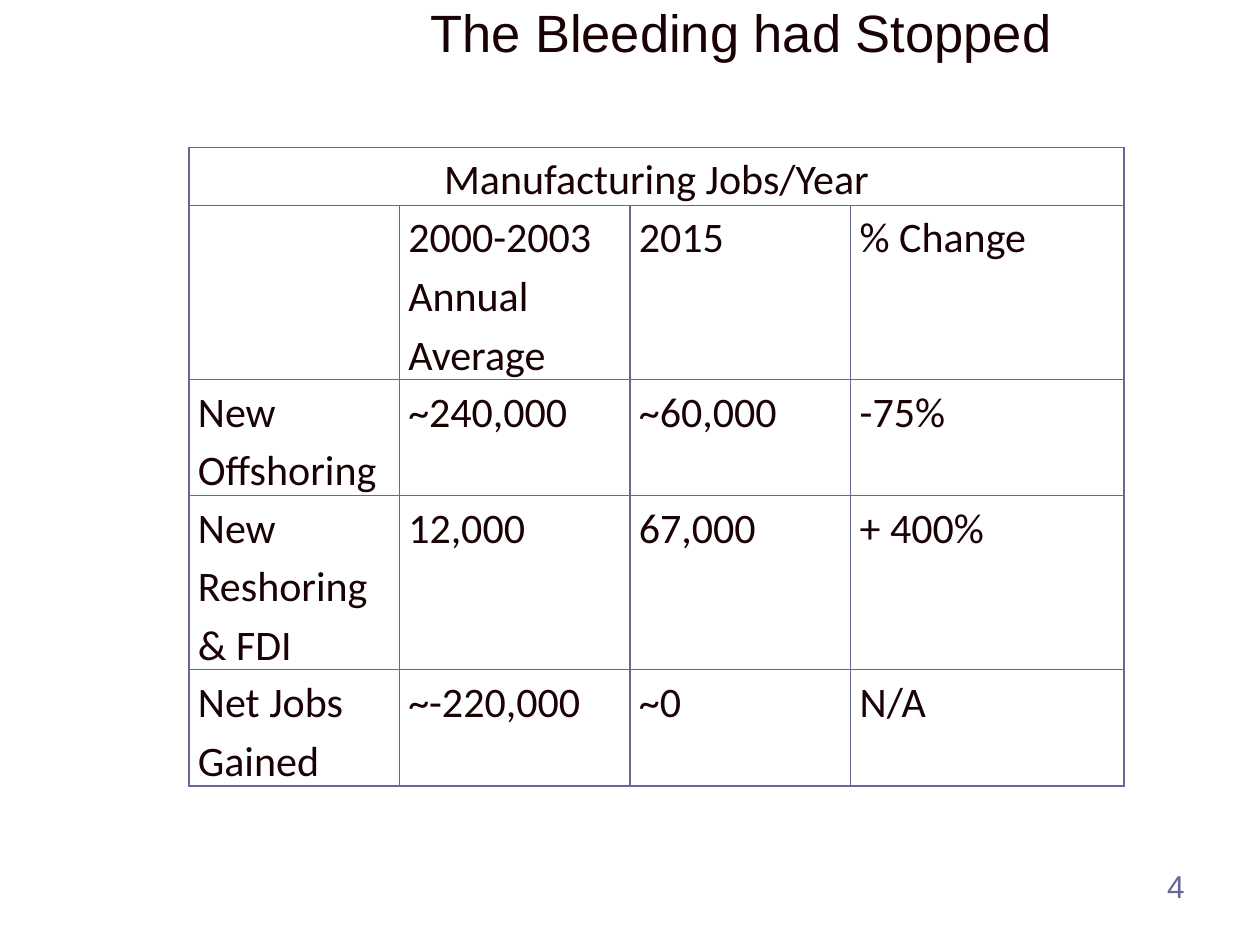
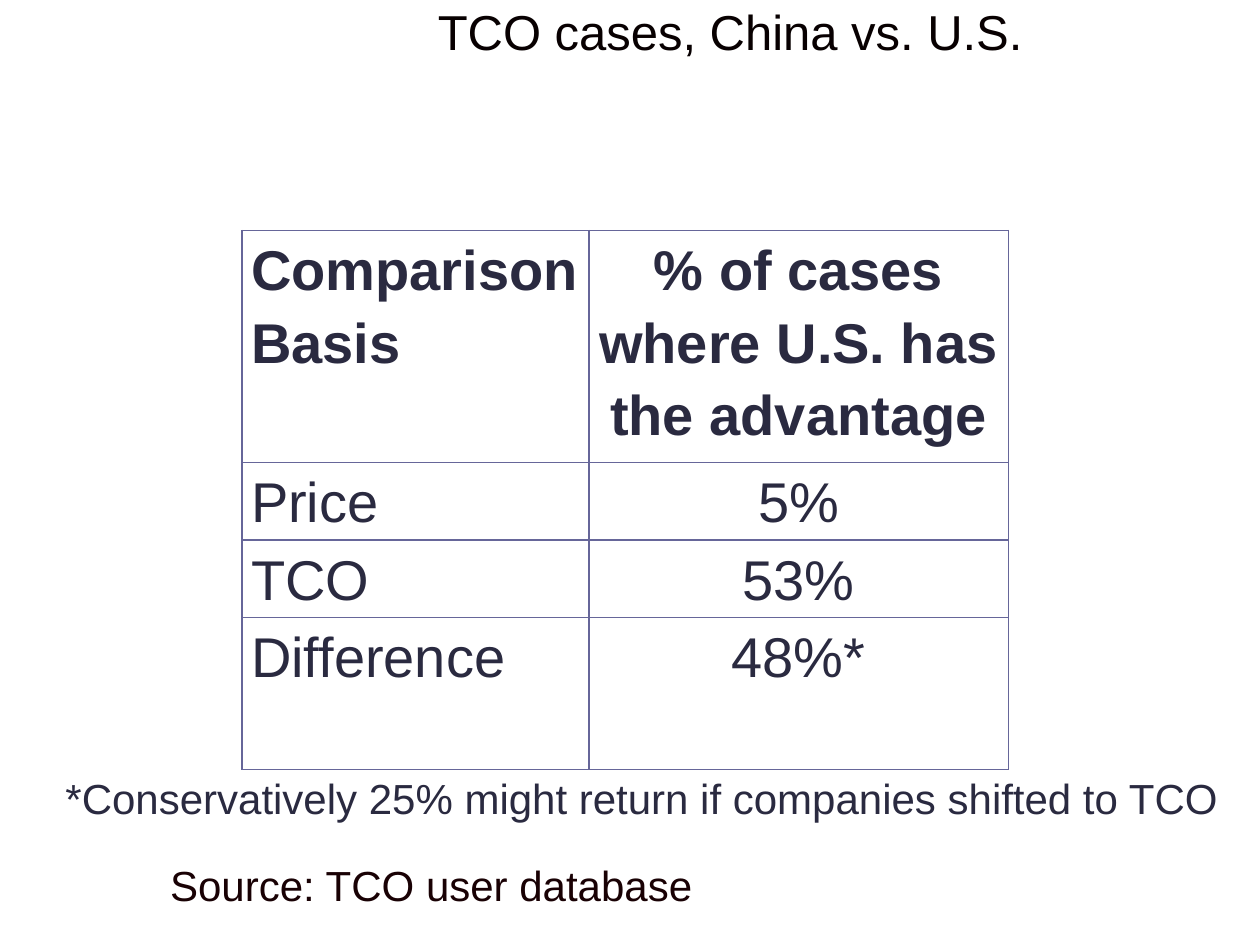
from lxml import etree
from pptx import Presentation
from pptx.dml.color import RGBColor
from pptx.enum import text
from pptx.oxml import ns
from pptx.util import Cm, Pt

INK = RGBColor(0x19, 0x01, 0x04)
BLACK = RGBColor(0x08, 0x00, 0x01)
NAVY = RGBColor(0x2A, 0x2A, 0x40)
VIOLET = RGBColor(0x66, 0x66, 0x99)

LEFT, CENTER, RIGHT = text.PP_ALIGN.LEFT, text.PP_ALIGN.CENTER, text.PP_ALIGN.RIGHT
JOBS_LINE = 1.17

JOBS_ROWS = [
    ["Manufacturing Jobs/Year", "", "", ""],
    ["", "2000-2003 Annual Average", "2015", "% Change"],
    ["New Offshoring", "~240,000", "~60,000", "-75%"],
    ["New Reshoring & FDI", "12,000", "67,000", "+ 400%"],
    ["Net Jobs Gained", "~-220,000", "~0", "N/A"],
]
TCO_ROWS = [
    ["Comparison Basis", "% of cases where U.S. has the advantage"],
    ["Price", "5%"],
    ["TCO", "53%"],
    ["Difference", "48%*"],
]


def style(paragraph, size, color, font="Arial", align=LEFT, bold=False):
    """Set the font and alignment of a paragraph."""
    paragraph.alignment = align
    paragraph.font.name = font
    paragraph.font.size = Pt(size)
    paragraph.font.bold = bold
    paragraph.font.color.rgb = color


def add_text(slide, box, words, size, color, align=LEFT, wrap=True):
    """Add a one-paragraph text box and return its frame."""
    frame = slide.shapes.add_textbox(*map(Cm, box)).text_frame
    frame.word_wrap = wrap
    frame.text = words
    style(frame.paragraphs[0], size, color, align=align)
    return frame


def add_title(slide, left, width, words, size, color):
    """Add the centred title at the top of a slide."""
    frame = add_text(slide, (left, -0.64, width, 2.54), words, size, color, CENTER)
    frame.vertical_anchor = text.MSO_ANCHOR.MIDDLE


def add_borders(cell):
    """Draw a thin violet line on all four sides of a cell."""
    properties = cell._tc.get_or_add_tcPr()
    for side in ("lnL", "lnR", "lnT", "lnB"):
        line = etree.SubElement(properties, ns.qn(f"a:{side}"), w=str(Pt(1)))
        fill = etree.SubElement(line, ns.qn("a:solidFill"))
        etree.SubElement(fill, ns.qn("a:srgbClr"), val=str(VIOLET))


def add_grid(slide, corner, widths, heights, rows, size, color, font):
    """Add an unfilled table with violet borders and return it."""
    box = (*corner, sum(widths), sum(heights))
    table = slide.shapes.add_table(len(rows), len(widths), *map(Cm, box)).table
    table.first_row = table.horz_banding = False
    for column, width in zip(table.columns, widths):
        column.width = Cm(width)
    for row, height, words in zip(table.rows, heights, rows):
        row.height = Cm(height)
        for cell, word in zip(row.cells, words):
            cell.margin_left = cell.margin_right = Cm(0.18)
            cell.margin_top = cell.margin_bottom = 0
            add_borders(cell)
            cell.fill.background()
            cell.text = word
            paragraph = cell.text_frame.paragraphs[0]
            paragraph.line_spacing = 1.15
            style(paragraph, size, color, font)
    return table


def build_jobs_slide(slide):
    """Compare manufacturing jobs per year."""
    add_title(slide, 4.88, 20.12, "The Bleeding had Stopped", 30, INK)
    heights = [JOBS_LINE * lines for lines in (1, 3, 2, 3, 2)]
    table = add_grid(slide, (3.81, 2.97), (4.24, 4.65, 4.45, 5.51), heights,
                     JOBS_ROWS, 24, INK, "Calibri")
    heading = table.cell(0, 0)
    heading.merge(table.cell(0, 3))
    heading.text_frame.paragraphs[0].alignment = CENTER
    add_text(slide, (18.21, 17.35, 5.92, 1.27), "4", 18, VIOLET, RIGHT)


def build_tco_slide(slide):
    """Show the share of cases where the U.S. has the advantage."""
    add_title(slide, 4.24, 20.96, "TCO cases, China vs. U.S.", 28, BLACK)
    table = add_grid(slide, (4.88, 4.65), (6.99, 8.46), (4.67, 1.55, 1.55, 3.07),
                     TCO_ROWS, 32, NAVY, "Arial")
    for cell in table.rows[0].cells:
        cell.text_frame.paragraphs[0].font.bold = True
    for row in table.rows:
        row.cells[1].text_frame.paragraphs[0].alignment = CENTER
    add_text(slide, (1.07, 15.44, 23.98, 1.27),
             "*Conservatively 25% might return if companies shifted to TCO",
             24, NAVY, wrap=False)
    add_text(slide, (3.18, 17.2, 11.15, 1.27), "Source: TCO user database",
             24, INK, wrap=False)


def main():
    """Build both slides and save the presentation."""
    presentation = Presentation()
    presentation.slide_width, presentation.slide_height = Cm(25.4), Cm(19.05)
    for build in (build_jobs_slide, build_tco_slide):
        build(presentation.slides.add_slide(presentation.slide_layouts[6]))
    presentation.save("out.pptx")


if __name__ == "__main__":
    main()
